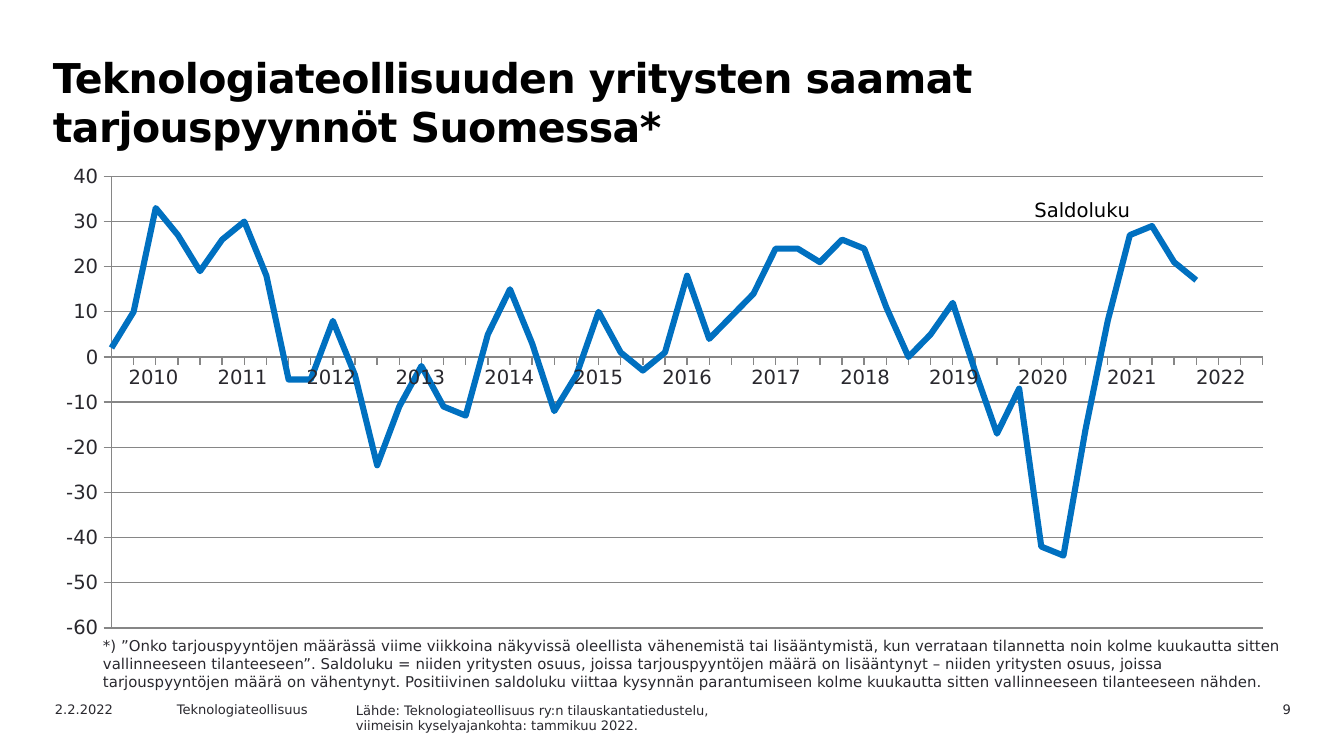
from lxml.etree import SubElement
from pptx import Presentation
from pptx.chart.data import CategoryChartData
from pptx.dml.color import RGBColor
from pptx.enum.chart import XL_CHART_TYPE as CT, XL_MARKER_STYLE as MS
from pptx.enum.chart import XL_TICK_LABEL_POSITION as TL, XL_TICK_MARK as TM
from pptx.enum.text import PP_ALIGN as AL
from pptx.oxml.ns import qn
from pptx.util import Pt

PX = 914400 / 134.4
FONT = "DejaVu Sans"
COLORS = {"title": "000000", "text": "29282E", "line": "0070C0", "axis": "868686"}
NO_STYLE = "{2D5ABB26-0587-4C30-8999-92F81FD0307C}"
TITLE = "Teknologiateollisuuden yritysten saamat tarjouspyynnöt Suomessa*"
NOTE = (
    "*) ”Onko tarjouspyyntöjen määrässä viime viikkoina näkyvissä oleellista vähenemistä "
    "tai lisääntymistä, kun verrataan tilannetta noin kolme kuukautta sitten vallinneeseen "
    "tilanteeseen”. Saldoluku = niiden yritysten osuus, joissa tarjouspyyntöjen määrä on "
    "lisääntynyt – niiden yritysten osuus, joissa tarjouspyyntöjen määrä on vähentynyt. "
    "Positiivinen saldoluku viittaa kysynnän parantumiseen kolme kuukautta sitten "
    "vallinneeseen tilanteeseen nähden."
)
SOURCE = [
    "Lähde: Teknologiateollisuus ry:n tilauskantatiedustelu,",
    "viimeisin kyselyajankohta: tammikuu 2022.",
]
QUARTERS = 53
BALANCE = [
    2, 10, 33, 27, 19, 26, 30, 18, -5, -5, 8, -4, -24, -11, -2, -11, -13, 5, 15, 3,
    -12, -4, 10, 1, -3, 1, 18, 4, 9, 14, 24, 24, 21, 26, 24, 11, 0, 5, 12, -3,
    -17, -7, -42, -44, -16, 8, 27, 29, 21, 17,
]


def px(n):
    return round(n * PX)


def color(name):
    return RGBColor.from_string(COLORS[name])


class Deck:
    """Holds the style and the current slide, and adds elements to it."""

    def __init__(self, w, h):
        self.prs = Presentation()
        self.prs.slide_width, self.prs.slide_height = px(w), px(h)
        self.s = self.prs.slides.add_slide(self.prs.slide_layouts[6])

    def font(self, f, size, name="text", bold=False):
        f.name, f.size, f.bold = FONT, Pt(size), bold
        f.color.rgb = color(name)

    def text(self, box, lines, size, name="text", bold=False, align=AL.LEFT, inset=(13, 7), spacing=0):
        tf = self.s.shapes.add_textbox(*map(px, box)).text_frame
        tf.word_wrap = True
        tf.margin_left, tf.margin_top = map(px, inset)
        tf.text = "\n".join(lines)
        for p in tf.paragraphs:
            p.alignment = align
            self.font(p.font, size, name, bold)
            if spacing:
                p._p.pPr.get_or_add_defRPr().set("spc", str(spacing))

    def layout(self, parent, index, **values):
        for old in parent.findall(qn("c:layout")):
            parent.remove(old)
        layout = SubElement(parent, qn("c:layout"))
        manual = SubElement(layout, qn("c:manualLayout"))
        for tag, val in values.items():
            SubElement(manual, qn("c:" + tag)).set("val", str(val))
        parent.insert(index, layout)

    def chart(self, box, title, values, count):
        data = CategoryChartData()
        data.categories = [str(i + 1) for i in range(count)]
        data.add_series(title, values + [None] * (count - len(values)))
        chart = self.s.shapes.add_chart(CT.LINE, *map(px, box), data).chart
        self.font(chart.font, 10.5)
        chart.has_legend = False
        chart.has_title = True
        heading = chart.chart_title
        heading.include_in_layout = False
        heading.text_frame.text = title
        self.font(heading.text_frame.paragraphs[0].font, 10.5, "title")
        self.layout(heading._element, 1, xMode="edge", yMode="edge", x=0.79, y=0.07)
        self.layout(chart._chartSpace.chart.plotArea, 0, layoutTarget="inner", xMode="edge",
                    yMode="edge", x=0.045, y=0.036, w=0.933, h=0.931)
        plot = chart.plots[0]
        plot.vary_by_categories = False
        series = plot.series[0]
        series.smooth = False
        series.marker.style = MS.NONE
        series.format.line.width = Pt(3.25)
        series.format.line.color.rgb = color("line")
        self.axes(chart)

    def axes(self, chart):
        cat, val = chart.category_axis, chart.value_axis
        cat.tick_label_position = TL.NONE
        cat.has_major_gridlines = False
        val.minimum_scale, val.maximum_scale, val.major_unit = -60, 40, 10
        val.has_major_gridlines = True
        for axis in (cat, val):
            axis.major_tick_mark, axis.minor_tick_mark = TM.OUTSIDE, TM.NONE
        for line in (cat.format.line, val.format.line, val.major_gridlines.format.line):
            line.color.rgb = color("axis")
            line.width = Pt(0.75)
        self.font(val.tick_labels.font, 10.5)
        ax = val._element
        for old in ax.findall(qn("c:crossBetween")):
            ax.remove(old)
        between = SubElement(ax, qn("c:crossBetween"))
        between.set("val", "midCat")
        ax.find(qn("c:crosses")).addnext(between)

    def year_row(self, box, years):
        table = self.s.shapes.add_table(1, len(years), *map(px, box)).table
        table.first_row = table.horz_banding = False
        table._tbl.tblPr.find(qn("a:tableStyleId")).text = NO_STYLE
        for cell, year in zip(table.rows[0].cells, years):
            cell.fill.background()
            cell.text = str(year)
            p = cell.text_frame.paragraphs[0]
            p.alignment = AL.CENTER
            self.font(p.font, 10.5)


def main():
    deck = Deck(1344, 756)
    deck.text((38, 42, 1175, 126), [TITLE], 22, "title", True, inset=(15, 10), spacing=-30)
    deck.text((1177, 695, 127, 24), ["9"], 7, align=AL.RIGHT)
    deck.text((42, 695, 134, 24), ["2.2.2022"], 7)
    deck.text((164, 695, 191, 24), ["Teknologiateollisuus"], 7)
    deck.text((343, 695, 445, 43), SOURCE, 7)
    deck.chart((56, 159, 1234, 485), "Saldoluku", BALANCE, QUARTERS)
    deck.text((90, 630, 1208, 67), [NOTE], 8)
    deck.year_row((109, 360, 1157, 42), range(2010, 2023))
    deck.prs.save("out.pptx")


if __name__ == "__main__":
    main()
